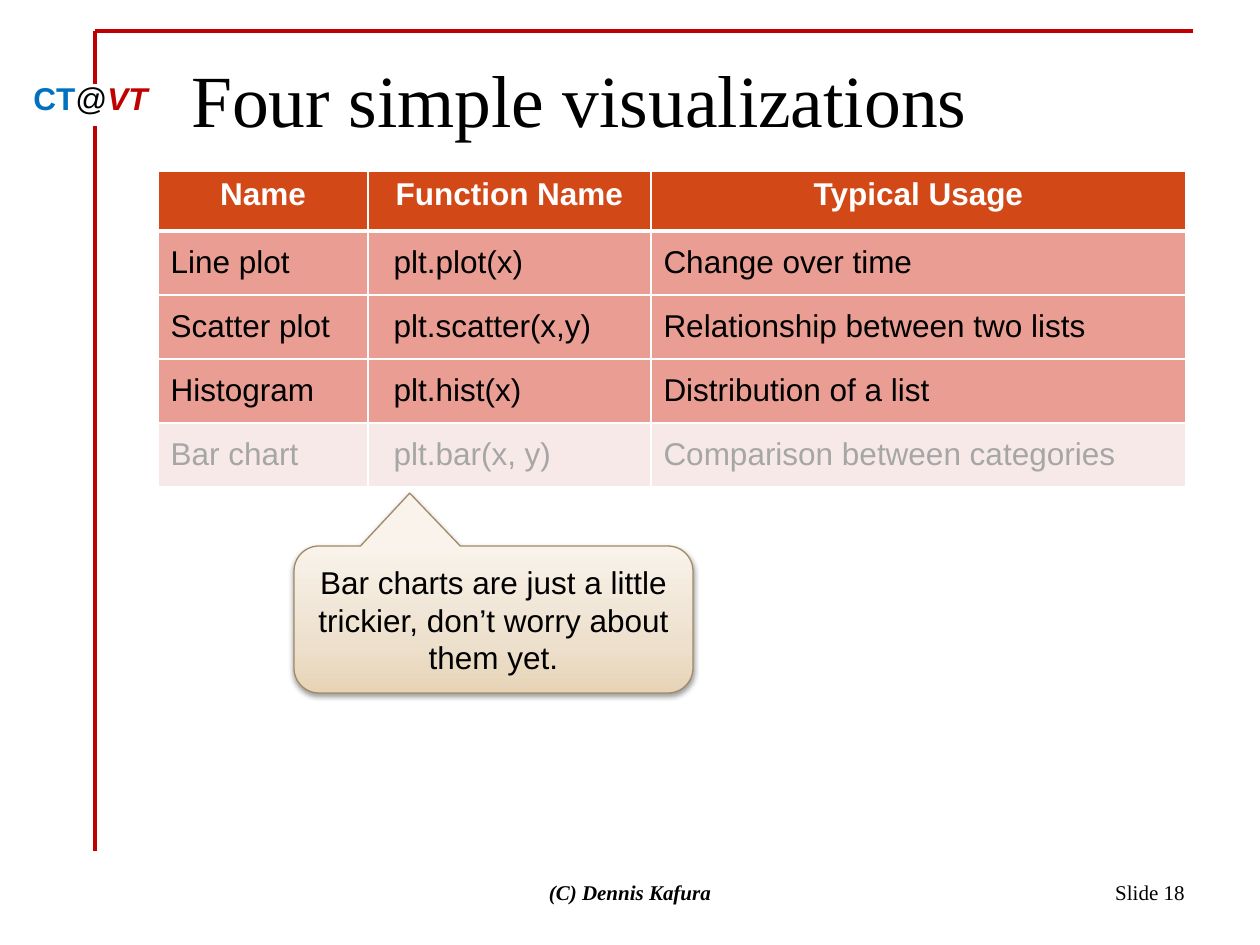
from copy import deepcopy

from lxml import etree
from pptx import Presentation
from pptx.dml.color import RGBColor
from pptx.enum.shapes import MSO_CONNECTOR, MSO_SHAPE
from pptx.enum.text import MSO_ANCHOR, PP_ALIGN
from pptx.oxml import parse_xml
from pptx.oxml.ns import nsdecls, qn
from pptx.util import Pt

EMU_PER_PX = 914400 / 126

STRAIGHT = MSO_CONNECTOR.STRAIGHT
CALLOUT = MSO_SHAPE.ROUNDED_RECTANGULAR_CALLOUT
TOP, MIDDLE = MSO_ANCHOR.TOP, MSO_ANCHOR.MIDDLE
LEFT, CENTER, RIGHT = PP_ALIGN.LEFT, PP_ALIGN.CENTER, PP_ALIGN.RIGHT

BLACK = RGBColor(0x00, 0x00, 0x00)
WHITE = RGBColor(0xFF, 0xFF, 0xFF)
RED = RGBColor(0xC0, 0x00, 0x00)
BLUE = RGBColor(0x00, 0x70, 0xC0)
ORANGE = RGBColor(0xD3, 0x48, 0x17)
SALMON = RGBColor(0xE9, 0x9D, 0x93)
PALE_PINK = RGBColor(0xF7, 0xE9, 0xE8)
GREY = RGBColor(0xA6, 0xA6, 0xA6)
BROWN = RGBColor(0xA0, 0x8B, 0x66)
SANDS = [
    (0, RGBColor(0xE7, 0xD4, 0xB7)),
    (0.35, RGBColor(0xED, 0xE0, 0xCD)),
    (1, RGBColor(0xF9, 0xF3, 0xEB)),
]

SANS, SERIF = "Arial", "Times New Roman"

HEADINGS = ["Name", "Function Name", "Typical Usage"]
PLOTS = [
    ["Line plot", "plt.plot(x)", "Change over time"],
    ["Scatter plot", "plt.scatter(x,y)", "Relationship between two lists"],
    ["Histogram", "plt.hist(x)", "Distribution of a list"],
    ["Bar chart", "plt.bar(x, y)", "Comparison between categories"],
]
COLUMN_WIDTHS = [210, 283, 535]
HEADER_HEIGHT, ROW_HEIGHT = 60, 64
FUNCTION_INDENT = 13


def px(length):
    return round(length * EMU_PER_PX)


def style_font(font, name, size, color, bold=False, italic=False):
    font.name = name
    font.size = Pt(size)
    font.color.rgb = color
    font.bold = bold
    font.italic = italic


def write(para, text, align, *font_style):
    para.text = text
    para.alignment = align
    style_font(para.font, *font_style)


def add_rule(page, start, end, width):
    rule = page.shapes.add_connector(STRAIGHT, *map(px, start + end))
    rule.line.color.rgb = RED
    rule.line.width = Pt(width)
    etree.SubElement(rule._element.spPr, qn("a:effectLst"))


def add_text(page, bounds, text, align, anchor, *font_style):
    box = page.shapes.add_textbox(*map(px, bounds))
    frame = box.text_frame
    frame.word_wrap = True
    frame.vertical_anchor = anchor
    write(frame.paragraphs[0], text, align, *font_style)
    return box


def add_course_mark(page):
    box = page.shapes.add_textbox(*map(px, (21, 73, 141, 50)))
    box.text_frame.word_wrap = False
    para = box.text_frame.paragraphs[0]
    for text, color, bold, italic in [
        ("CT", BLUE, True, False),
        ("@", BLACK, False, False),
        ("VT", RED, True, True),
    ]:
        span = para.add_run()
        span.text = text
        style_font(span.font, SANS, 18, color, bold, italic)


def add_borders(cell, widths):
    properties = cell._tc.get_or_add_tcPr()
    for side, width in zip("LRTB", widths):
        properties.append(parse_xml(
            f'<a:ln{side} {nsdecls("a")} w="{Pt(width)}"><a:solidFill>'
            f'<a:srgbClr val="{WHITE}"/></a:solidFill></a:ln{side}>'
        ))


def fill_cell(cell, text, fill, borders, anchor, align, *font_style):
    add_borders(cell, borders)
    cell.fill.solid()
    cell.fill.fore_color.rgb = fill
    cell.vertical_anchor = anchor
    write(cell.text_frame.paragraphs[0], text, align, *font_style)


def add_plot_table(page):
    height = HEADER_HEIGHT + ROW_HEIGHT * len(PLOTS)
    bounds = map(px, (158, 171, sum(COLUMN_WIDTHS), height))
    table = page.shapes.add_table(len(PLOTS) + 1, len(HEADINGS), *bounds).table
    table.horz_banding = False
    for column, width in zip(table.columns, COLUMN_WIDTHS):
        column.width = px(width)
    for index, row in enumerate(table.rows):
        row.height = px(ROW_HEIGHT if index else HEADER_HEIGHT)

    for column, heading in enumerate(HEADINGS):
        fill_cell(table.cell(0, column), heading, ORANGE, (1, 1, 1, 3),
                  TOP, CENTER, SANS, 18, WHITE, True)
    for row, plot in enumerate(PLOTS, start=1):
        muted = row == len(PLOTS)
        fill, color = (PALE_PINK, GREY) if muted else (SALMON, BLACK)
        borders = (1, 1, 3 if row == 1 else 1, 1)
        for column, text in enumerate(plot):
            fill_cell(table.cell(row, column), text, fill, borders,
                      MIDDLE, LEFT, SANS, 18, color)
        function_para = table.cell(row, 1).text_frame.paragraphs[0]
        function_para._p.get_or_add_pPr().set("marL", str(px(FUNCTION_INDENT)))


def fill_gradient(shape, stops, angle):
    shape.fill.gradient()
    stop_list = shape._element.spPr.find(".//" + qn("a:gsLst"))
    while len(stop_list) < len(stops):
        stop_list.append(deepcopy(stop_list[0]))
    for stop, (position, color) in zip(shape.fill.gradient_stops, stops):
        stop.position = position
        stop.color.rgb = color
    shape.fill.gradient_angle = angle


def add_soft_shadow(shape):
    shape._element.spPr.append(parse_xml(
        f'<a:effectLst {nsdecls("a")}><a:outerShdw blurRad="{Pt(3.1)}" '
        f'dist="{Pt(1.6)}" dir="5400000" rotWithShape="0">'
        f'<a:srgbClr val="{BLACK}"><a:alpha val="38000"/></a:srgbClr>'
        "</a:outerShdw></a:effectLst>"
    ))


def add_callout(page, bounds, text):
    callout = page.shapes.add_shape(CALLOUT, *map(px, bounds))
    for index, value in enumerate((-0.21, -0.86, 0.17)):
        callout.adjustments[index] = value
    fill_gradient(callout, SANDS, 90)
    callout.line.color.rgb = BROWN
    callout.line.width = Pt(0.75)
    add_soft_shadow(callout)
    frame = callout.text_frame
    frame.word_wrap = True
    frame.vertical_anchor = MIDDLE
    write(frame.paragraphs[0], text, CENTER, SANS, 18, BLACK)


def main():
    deck = Presentation()
    deck.slide_width, deck.slide_height = px(1260), px(945)
    page = deck.slides.add_slide(deck.slide_layouts[6])

    add_rule(page, (95, 31), (1193, 31), 2)
    add_course_mark(page)
    add_rule(page, (95, 31), (95, 84), 1.75)
    add_rule(page, (95, 126), (95, 851), 1.75)
    title = add_text(page, (179, 38, 1018, 98), "Four simple visualizations",
                     LEFT, TOP, SERIF, 42, BLACK)
    title.text_frame.margin_top = px(16)
    add_plot_table(page)
    add_text(page, (903, 861, 294, 63), "Slide 18",
             RIGHT, MIDDLE, SERIF, 12, BLACK)
    add_text(page, (430, 861, 400, 63), "(C) Dennis Kafura",
             CENTER, MIDDLE, SERIF, 12, BLACK, True, True)
    add_callout(page, (294, 546, 399, 147),
                "Bar charts are just a little trickier, don’t worry about them yet.")
    deck.save("out.pptx")


if __name__ == "__main__":
    main()
